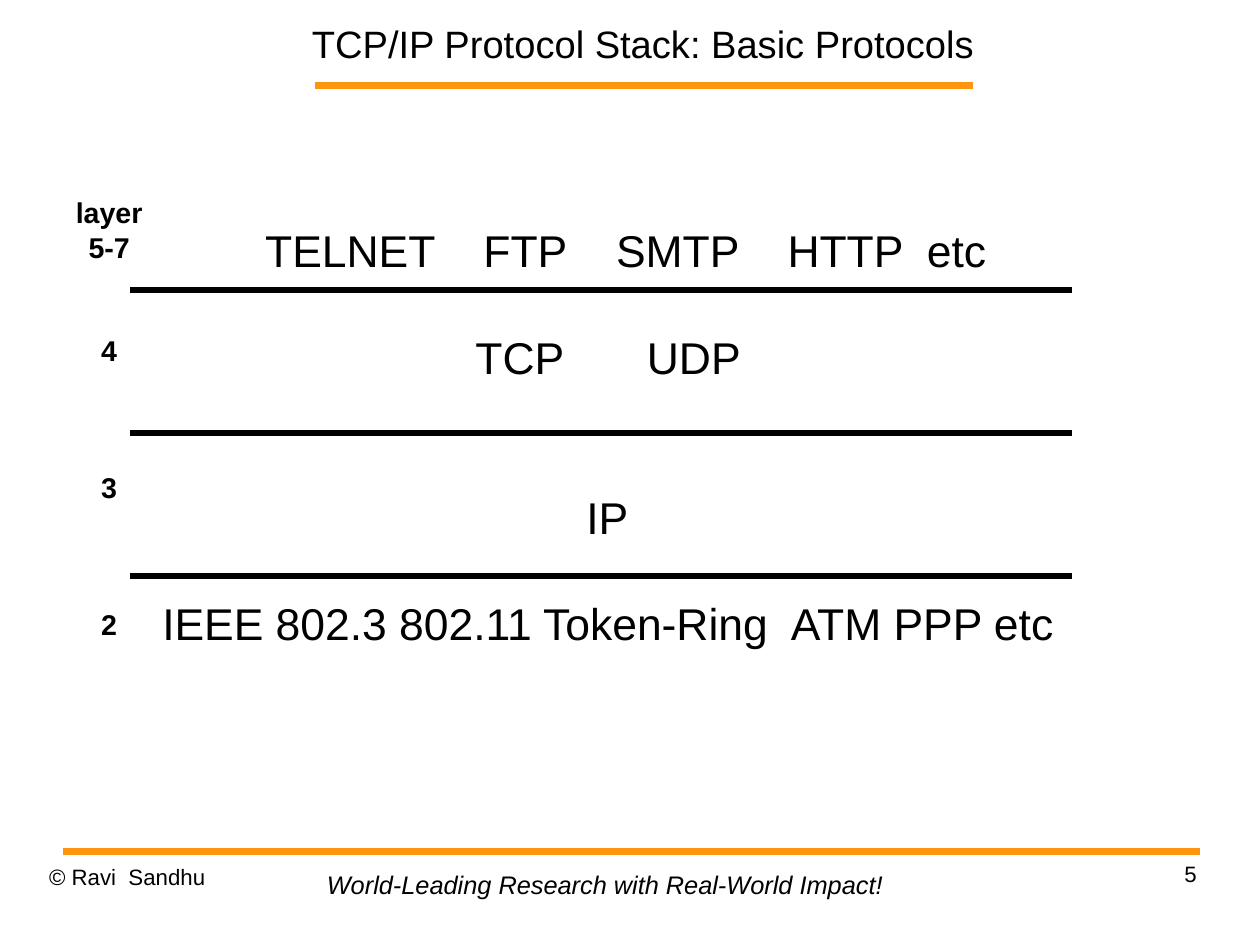
from pptx import Presentation
from pptx.dml.color import RGBColor
from pptx.enum.shapes import MSO_CONNECTOR as CONN
from pptx.enum.text import MSO_ANCHOR as ANCHOR, MSO_AUTO_SIZE as AUTO, PP_ALIGN as ALIGN
from pptx.oxml.ns import qn
from pptx.util import Inches, Pt
from lxml import etree

BLACK, ORANGE = "000000", "FF950E"
FONT = "Arial"
CM_PER_INCH = 2.54

# Layer labels and the slot each one takes in the left column
LAYERS = [("layer", 0), ("5-7", 1), ("4", 4), ("3", 8), ("2", 12)]
LAYER_TOP, LAYER_PITCH = 1.71, 0.3

# Protocol rows: slot, then each text with its left edge
PROTOCOLS = [
    (0, [("TELNET", 2.32), ("FTP", 4.23), ("SMTP", 5.39), ("HTTP", 6.89), ("etc", 8.11)]),
    (2, [("TCP", 4.16), ("UDP", 5.66)]),
    (5, [("IP", 5.13)]),
    (7, [("IEEE 802.3 802.11 Token-Ring", 1.42), ("ATM PPP etc", 6.92)]),
]
PROTOCOL_TOP, PROTOCOL_PITCH, PROTOCOL_RIGHT = 1.95, 1.4 / 3, 9.51


def color(hex_code):
    return RGBColor.from_string(hex_code)


def write(sp, text, size, align=ALIGN.LEFT, anchor=ANCHOR.TOP, bold=False,
          italic=False, tabs=()):
    tf = sp.text_frame
    tf.word_wrap = True
    tf.auto_size = AUTO.NONE
    tf.vertical_anchor = anchor
    tf.margin_left = tf.margin_right = tf.margin_top = tf.margin_bottom = 0
    p = tf.paragraphs[0]
    p.alignment = align
    if tabs:
        tab_list = etree.SubElement(p._p.get_or_add_pPr(), qn("a:tabLst"))
        for pos in tabs:
            etree.SubElement(tab_list, qn("a:tab"), pos=str(Inches(pos)), algn="l")
    r = p.add_run()
    r.text = text
    r.font.name, r.font.size = FONT, Pt(size)
    r.font.bold, r.font.italic = bold, italic
    r.font.color.rgb = color(BLACK)


def add_text(s, x, y, w, h, text, size, **fmt):
    sp = s.shapes.add_textbox(Inches(x), Inches(y), Inches(w), Inches(h))
    write(sp, text, size, **fmt)


def add_rule(s, x1, x2, y, hex_code, width):
    line = s.shapes.add_connector(CONN.STRAIGHT, Inches(x1), Inches(y), Inches(x2), Inches(y))
    line.line.color.rgb = color(hex_code)
    line.line.width = Pt(width)
    etree.SubElement(line._element.spPr, qn("a:effectLst"))


def add_title(s, text):
    sp = s.shapes.title
    sp.left, sp.top, sp.width, sp.height = Inches(2.41), Inches(0), Inches(6.43), Inches(0.75)
    write(sp, text, 24, align=ALIGN.CENTER, anchor=ANCHOR.MIDDLE)


def add_protocols(s, slot, items):
    left = items[0][1]
    add_text(s, left, PROTOCOL_TOP + slot * PROTOCOL_PITCH, PROTOCOL_RIGHT - left, PROTOCOL_PITCH,
             "\t".join(text for text, _ in items), 28,
             tabs=[x - left for _, x in items[1:]])


def main():
    # Page of 28 by 21 cm
    prs = Presentation()
    prs.slide_width, prs.slide_height = Inches(28 / CM_PER_INCH), Inches(21 / CM_PER_INCH)
    s = prs.slides.add_slide(prs.slide_layouts[5])

    # Title and orange rules
    add_title(s, "TCP/IP Protocol Stack: Basic Protocols")
    add_rule(s, 2.76, 8.51, 0.75, ORANGE, 4.31)
    add_rule(s, 0.55, 10.5, 7.45, ORANGE, 4.31)

    # Footer
    add_text(s, 0.43, 7.55, 2.3, 0.57, "© Ravi  Sandhu", 14)
    add_text(s, 2.86, 7.6, 5.04, 0.37, "World-Leading Research with Real-World Impact!", 16,
             italic=True)
    add_text(s, 7.9, 7.53, 2.57, 0.57, "5", 14, align=ALIGN.RIGHT)

    # Layer numbers
    for label, slot in LAYERS:
        add_text(s, 0.56, LAYER_TOP + slot * LAYER_PITCH, 0.79, LAYER_PITCH, label, 18,
                 align=ALIGN.CENTER, bold=True)

    # Protocols and the lines between the layers
    for slot, items in PROTOCOLS:
        add_protocols(s, slot, items)
    for i in range(3):
        add_rule(s, 1.14, 9.38, 2.54 + i * 1.25, BLACK, 4)

    prs.save("out.pptx")


if __name__ == "__main__":
    main()
